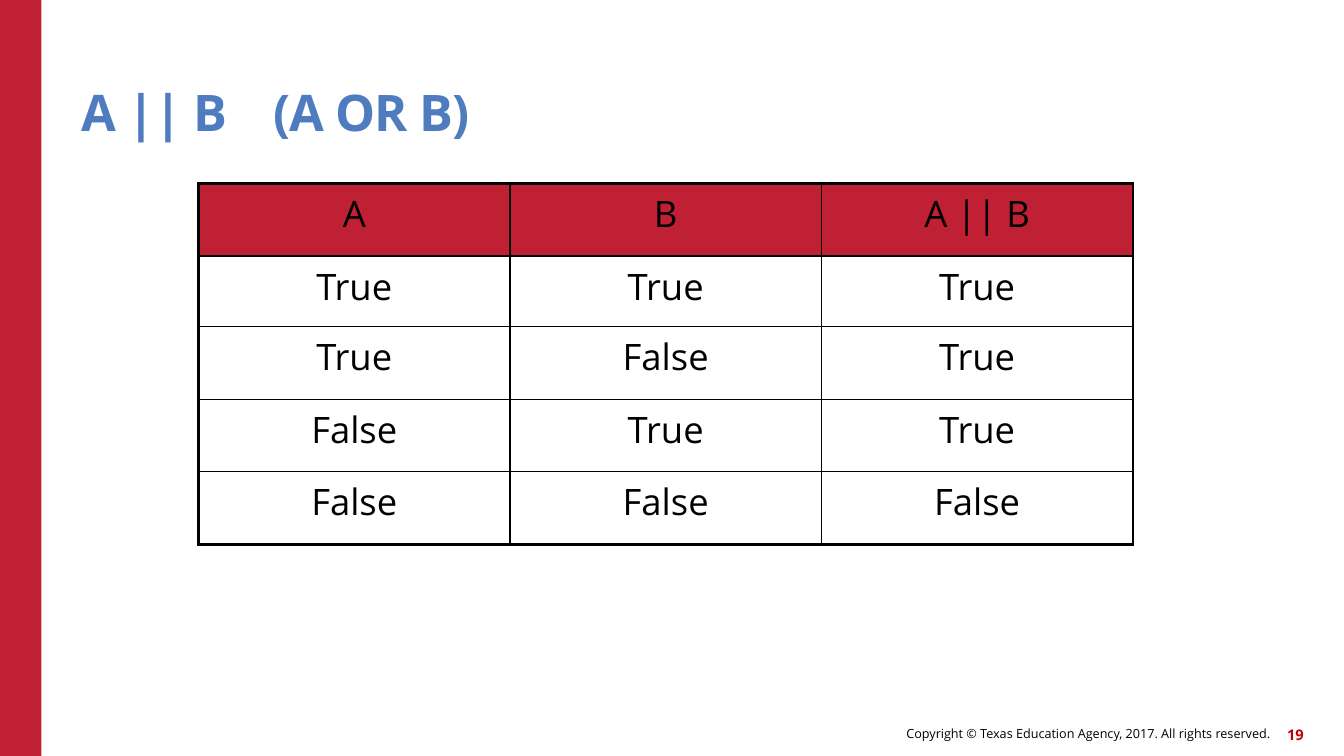
from dataclasses import dataclass

from lxml import etree
from pptx import Presentation
from pptx.dml.color import RGBColor
from pptx.enum.shapes import MSO_SHAPE
from pptx.enum.text import MSO_ANCHOR, PP_ALIGN
from pptx.oxml.ns import qn
from pptx.util import Inches, Pt

RECTANGLE = MSO_SHAPE.RECTANGLE
LEFT, CENTER, RIGHT = PP_ALIGN.LEFT, PP_ALIGN.CENTER, PP_ALIGN.RIGHT
TOP, MIDDLE, BOTTOM = MSO_ANCHOR.TOP, MSO_ANCHOR.MIDDLE, MSO_ANCHOR.BOTTOM

SLIDE_WIDTH, SLIDE_HEIGHT = Inches(13.33), Inches(7.5)
GRID_COLUMNS, GRID_ROWS = 40, 30

TRUTH_TABLE = [
    ("A", "B", "A || B"),
    ("True", "True", "True"),
    ("True", "False", "True"),
    ("False", "True", "True"),
    ("False", "False", "False"),
]
TABLE_COLUMN = 9.27
TABLE_ROWS = (2.88, 2.8, 2.88, 2.88, 2.88)


@dataclass(frozen=True)
class Theme:
    font: str = "Open Sans"
    red: str = "C02033"
    blue: str = "4E7CBE"
    number_red: str = "C00000"
    black: str = "000000"
    title_size: float = 36
    table_size: float = 26
    number_size: float = 10.5
    footer_size: float = 9
    outer_line: float = 2.25
    inner_line: float = 1


THEME = Theme()


def across(columns):
    return round(SLIDE_WIDTH * columns / GRID_COLUMNS)


def down(rows):
    return round(SLIDE_HEIGHT * rows / GRID_ROWS)


def place(left, top, width, height):
    return across(left), down(top), across(width), down(height)


def set_all(target, values):
    for name, value in values.items():
        setattr(target, name, value)


def write_text(paragraph, text, size, color, bold=False, align=LEFT):
    paragraph.alignment = align
    run = paragraph.add_run()
    run.text = text
    set_all(run.font, {"name": THEME.font, "size": Pt(size), "bold": bold})
    run.font.color.rgb = RGBColor.from_string(color)
    return run


def add_bar(slide, area, color):
    bar = slide.shapes.add_shape(RECTANGLE, *place(*area))
    bar.shadow.inherit = False
    bar.fill.solid()
    bar.fill.fore_color.rgb = RGBColor.from_string(color)
    bar.line.fill.background()


def add_label(slide, area, anchor, text, size, color, **style):
    frame = slide.shapes.add_textbox(*place(*area)).text_frame
    set_all(frame, {
        "word_wrap": True, "vertical_anchor": anchor,
        "margin_left": 0, "margin_right": 0,
        "margin_top": 0, "margin_bottom": 0,
    })
    paragraph = frame.paragraphs[0]
    return paragraph, write_text(paragraph, text, size, color, **style)


def add_title(slide, area, text, tab_position):
    paragraph, run = add_label(slide, area, BOTTOM, text, THEME.title_size,
                               THEME.blue, bold=True)
    tabs = etree.SubElement(paragraph._p.get_or_add_pPr(), qn("a:tabLst"))
    etree.SubElement(tabs, qn("a:tab"), pos=str(across(tab_position)), algn="l")
    paragraph.line_spacing = 0.9
    run._r.get_or_add_rPr().set("spc", "-60")


def set_borders(cell, widths):
    """Draw the sides in the order left, right, top, bottom; call before filling."""
    properties = cell._tc.get_or_add_tcPr()
    for side, width in zip("LRTB", widths):
        line = etree.SubElement(properties, qn(f"a:ln{side}"), w=str(Pt(width)))
        fill = etree.SubElement(line, qn("a:solidFill"))
        etree.SubElement(fill, qn("a:srgbClr"), val=THEME.black)


def format_cell(cell, text, is_header, outer_sides):
    set_borders(cell, [THEME.outer_line if outer else THEME.inner_line
                       for outer in outer_sides])
    if is_header:
        cell.fill.solid()
        cell.fill.fore_color.rgb = RGBColor.from_string(THEME.red)
    else:
        cell.fill.background()
    set_all(cell, {
        "vertical_anchor": TOP,
        "margin_left": across(0.39), "margin_right": across(0.39),
        "margin_top": down(0.2), "margin_bottom": down(0.2),
    })
    write_text(cell.text_frame.paragraphs[0], text, THEME.table_size,
               THEME.black, align=CENTER)


def add_truth_table(slide, left, top, values):
    row_count, column_count = len(values), len(values[0])
    area = place(left, top, TABLE_COLUMN * column_count, sum(TABLE_ROWS))
    table = slide.shapes.add_table(row_count, column_count, *area).table
    set_all(table, {"first_row": False, "horz_banding": False})
    for column in table.columns:
        column.width = across(TABLE_COLUMN)
    for row, height in zip(table.rows, TABLE_ROWS):
        row.height = down(height)
    for r, row_values in enumerate(values):
        for c, text in enumerate(row_values):
            outer_sides = (c == 0, c == column_count - 1,
                           r == 0, r == row_count - 1)
            format_cell(table.cell(r, c), text, r == 0, outer_sides)


def main():
    presentation = Presentation()
    set_all(presentation, {"slide_width": SLIDE_WIDTH, "slide_height": SLIDE_HEIGHT})
    slide = presentation.slides.add_slide(presentation.slide_layouts[6])
    add_bar(slide, (0, 0, 1.23, GRID_ROWS), THEME.red)
    add_label(slide, (18.42, 28.48, 19.38, 1.28), MIDDLE,
              "Copyright © Texas Education Agency, 2017. All rights reserved.",
              THEME.footer_size, THEME.black, align=RIGHT)
    add_label(slide, (37.54, 28.52, 1.26, 1.28), MIDDLE, "19",
              THEME.number_size, THEME.number_red, bold=True, align=RIGHT)
    add_title(slide, (2.43, 1.8, 33, 3.84), "A || B\t(A OR B)", tab_position=5.7)
    add_truth_table(slide, 5.91, 7.28, TRUTH_TABLE)
    presentation.save("out.pptx")


if __name__ == "__main__":
    main()
